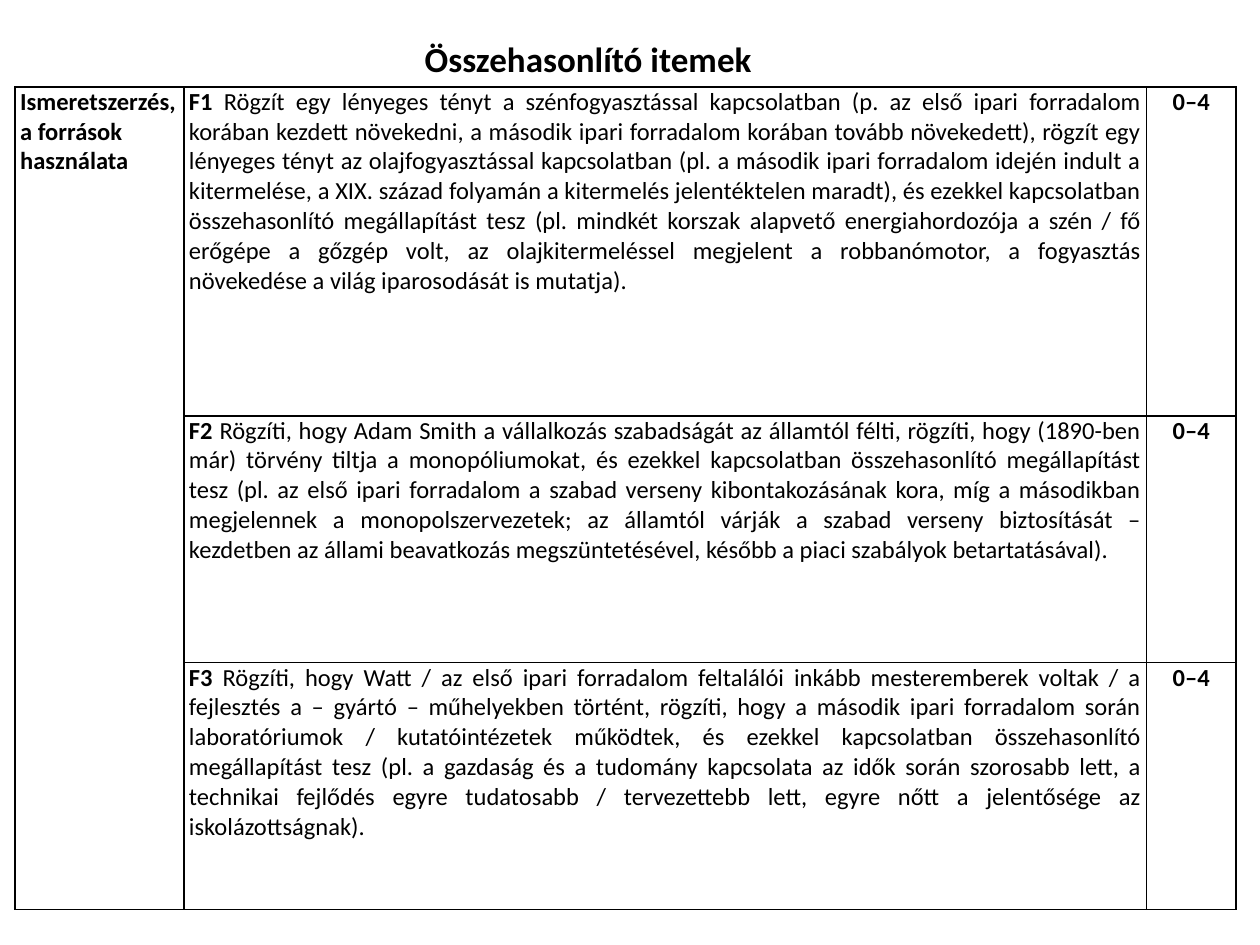
from lxml import etree
from pptx import Presentation
from pptx.dml.color import RGBColor
from pptx.enum.text import MSO_ANCHOR, PP_ALIGN
from pptx.oxml.ns import qn
from pptx.util import Inches, Pt

LEFT, CENTER, JUSTIFY = PP_ALIGN.LEFT, PP_ALIGN.CENTER, PP_ALIGN.JUSTIFY
TOP = MSO_ANCHOR.TOP
TITLE_ONLY = 5
COLORS = {"text": "000000", "border": "000000"}
FONT = "Calibri"
COLUMNS = [1.34, 7.64, 0.71]
ROWS = [2.61, 1.96, 1.96]
SKILL = "Ismeretszerzés, a források használata"
POINTS = "0–4"
ITEMS = [
    ("F1 ", "Rögzít egy lényeges tényt a szénfogyasztással kapcsolatban (p. az első ipari "
     "forradalom korában kezdett növekedni, a második ipari forradalom korában tovább "
     "növekedett), rögzít egy lényeges tényt az olajfogyasztással kapcsolatban (pl. a második "
     "ipari forradalom idején indult a kitermelése, a XIX. század folyamán a kitermelés "
     "jelentéktelen maradt), és ezekkel kapcsolatban összehasonlító megállapítást tesz (pl. "
     "mindkét korszak alapvető energiahordozója a szén / fő erőgépe a gőzgép volt, az "
     "olajkitermeléssel megjelent a robbanómotor, a fogyasztás növekedése a világ "
     "iparosodását is mutatja)."),
    ("F2 ", "Rögzíti, hogy Adam Smith a vállalkozás szabadságát az államtól félti, rögzíti, hogy "
     "(1890-ben már) törvény tiltja a monopóliumokat, és ezekkel kapcsolatban összehasonlító "
     "megállapítást tesz (pl. az első ipari forradalom a szabad verseny kibontakozásának kora, "
     "míg a másodikban megjelennek a monopolszervezetek; az államtól várják a szabad verseny "
     "biztosítását – kezdetben az állami beavatkozás megszüntetésével, később a piaci "
     "szabályok betartatásával)."),
    ("F3 ", "Rögzíti, hogy Watt / az első ipari forradalom feltalálói inkább mesteremberek "
     "voltak / a fejlesztés a – gyártó – műhelyekben történt, rögzíti, hogy a második ipari "
     "forradalom során laboratóriumok / kutatóintézetek működtek, és ezekkel kapcsolatban "
     "összehasonlító megállapítást tesz (pl. a gazdaság és a tudomány kapcsolata az idők során "
     "szorosabb lett, a technikai fejlődés egyre tudatosabb / tervezettebb lett, egyre nőtt a "
     "jelentősége az iskolázottságnak)."),
]


class SlideBuilder:
    """Holds the text style and the current slide."""

    def __init__(self, slide, font, colors):
        self.s, self.font, self.colors = slide, font, colors

    def add_runs(self, p, runs, size, align):
        p.alignment = align
        for text, bold in runs:
            r = p.add_run()
            r.text = text
            style = {"name": self.font, "size": Pt(size), "bold": bold}
            for name, value in style.items():
                setattr(r.font, name, value)
            r.font.color.rgb = RGBColor.from_string(self.colors["text"])

    def title(self, text, left, top, width, height, size):
        sp = self.s.shapes.title
        box = {"left": left, "top": top, "width": width, "height": height}
        for name, value in box.items():
            setattr(sp, name, Inches(value))
        tf = sp.text_frame
        tf.word_wrap = False
        tf.vertical_anchor = TOP
        self.add_runs(tf.paragraphs[0], [(text, True)], size, LEFT)

    def table(self, left, top, columns, rows):
        frame = self.s.shapes.add_table(
            len(rows), len(columns), Inches(left), Inches(top),
            Inches(sum(columns)), Inches(sum(rows)))
        table = frame.table
        table.first_row = table.horz_banding = False
        for column, width in zip(table.columns, columns):
            column.width = Inches(width)
        for row, height in zip(table.rows, rows):
            row.height = Inches(height)
        for cell in table.iter_cells():
            self.borders(cell, 1)
            cell.fill.background()
        return table

    def borders(self, cell, width):
        tcPr = cell._tc.get_or_add_tcPr()
        for side in ("lnL", "lnR", "lnT", "lnB"):
            ln = etree.SubElement(tcPr, qn(f"a:{side}"), w=str(Pt(width)))
            fill = etree.SubElement(ln, qn("a:solidFill"))
            etree.SubElement(fill, qn("a:srgbClr"), val=self.colors["border"])

    def cell(self, cell, runs, align=LEFT):
        margins = {"left": 0.04, "top": 0, "right": 0.04, "bottom": 0}
        for side, value in margins.items():
            setattr(cell, f"margin_{side}", Inches(value))
        cell.vertical_anchor = TOP
        self.add_runs(cell.text_frame.paragraphs[0], runs, 14, align)


def main():
    prs = Presentation()
    prs.slide_width, prs.slide_height = Inches(10), Inches(7.5)
    slide = prs.slides.add_slide(prs.slide_layouts[TITLE_ONLY])
    builder = SlideBuilder(slide, FONT, COLORS)
    table = builder.table(0.12, 0.69, COLUMNS, ROWS)
    table.cell(0, 0).merge(table.cell(len(ROWS) - 1, 0))
    builder.cell(table.cell(0, 0), [(SKILL, True)])
    for row, (code, description) in enumerate(ITEMS):
        builder.cell(table.cell(row, 1), [(code, True), (description, False)], JUSTIFY)
        builder.cell(table.cell(row, 2), [(POINTS, True)], CENTER)
    builder.title("Összehasonlító itemek", 3.27, 0.25, 2.82, 0.44, 20)
    prs.save("out.pptx")


if __name__ == "__main__":
    main()
